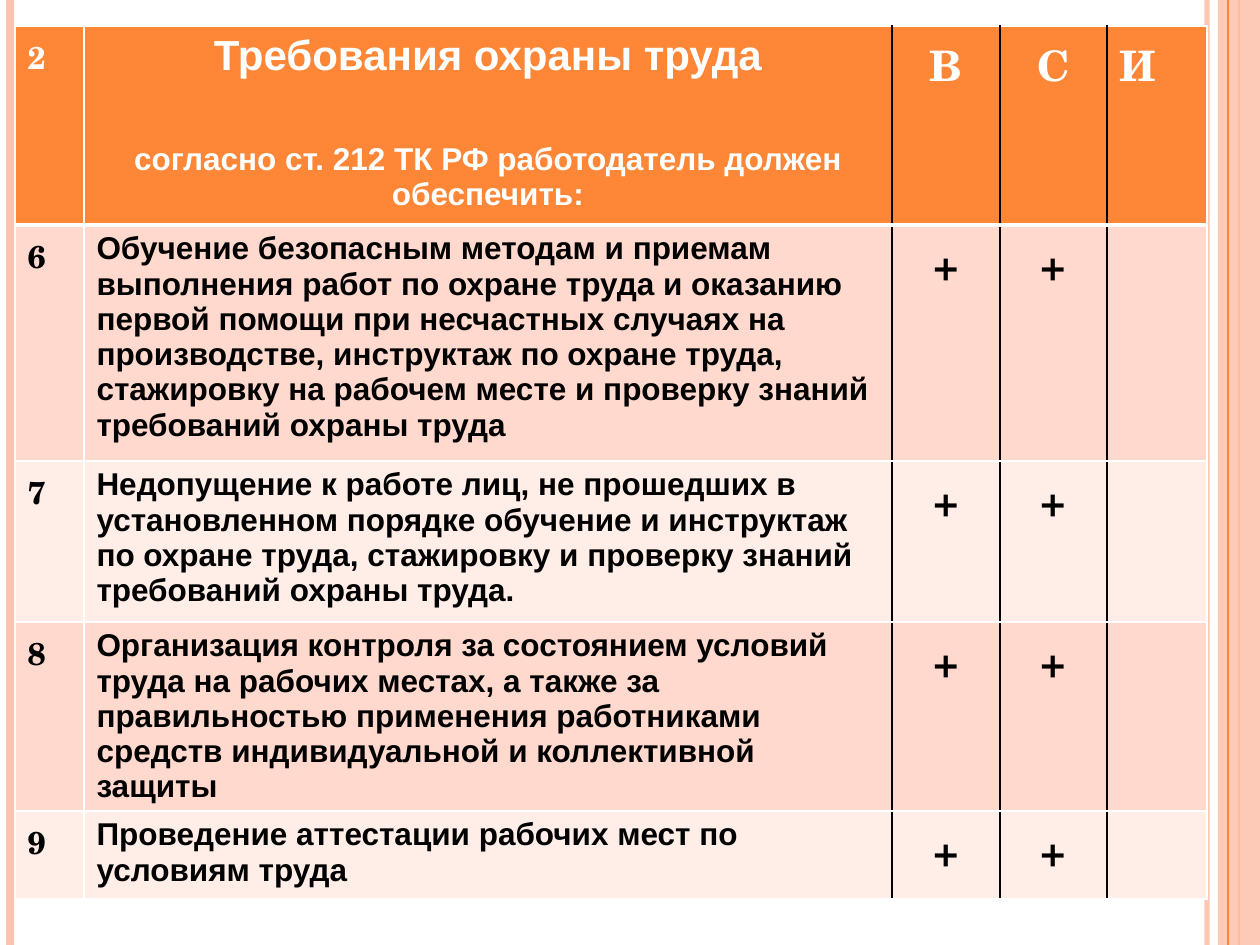
from dataclasses import dataclass

from pptx import Presentation
from pptx import util as u
from pptx.dml.color import RGBColor
from pptx.enum import shapes, text
from pptx.oxml.ns import qn
from lxml import etree

WHITE = RGBColor(0xFF, 0xFF, 0xFF)
BLACK = RGBColor(0, 0, 0)
ORANGE = RGBColor(0xFE, 0x86, 0x37)
PEACH = RGBColor(0xFE, 0xC3, 0xAE)
BAND_DARK = RGBColor(0xFF, 0xD9, 0xCE)
BAND_LIGHT = RGBColor(0xFF, 0xED, 0xE8)
SERIF = "TeX Gyre Schola"
SANS = "Arial"
WIDTH, HEIGHT = 1260, 945
COLUMNS = [69, 808, 108, 107, 100]
ROWS = [199, 236, 161, 161, 88]
TITLE = "Требования охраны труда"
SUBTITLE = "согласно ст. 212 ТК РФ работодатель должен обеспечить:"


@dataclass
class Stripe:
    x: int
    color: RGBColor
    weight: float
    alpha: int = 100


@dataclass
class Duty:
    number: str
    wording: str
    marks: tuple[str, str, str] = ("+", "+", "")


STRIPES_BELOW = [
    Stripe(1207, PEACH, 3, 93),
    Stripe(10, PEACH, 4.5),
    Stripe(1239, ORANGE, 1.5),
]
STRIPE_ABOVE = Stripe(1228, ORANGE, 0.75)
DUTIES = [
    Duty("6", "Обучение безопасным методам и приемам выполнения работ по охране труда "
         "и оказанию первой помощи при несчастных случаях на производстве, инструктаж "
         "по охране труда, стажировку на рабочем месте и проверку знаний требований "
         "охраны труда"),
    Duty("7", "Недопущение к работе лиц, не прошедших в установленном порядке обучение "
         "и инструктаж по охране труда, стажировку и проверку знаний требований "
         "охраны труда."),
    Duty("8", "Организация контроля за состоянием условий труда на рабочих местах, "
         "а также за правильностью применения работниками средств индивидуальной "
         "и коллективной защиты"),
    Duty("9", "Проведение аттестации рабочих мест по условиям труда"),
]


def px(n: int) -> u.Emu:
    return u.Emu(round(n * 914400 / 126))


def set_alpha(fill_parent, percent: int) -> None:
    color = fill_parent.find(".//" + qn("a:srgbClr"))
    etree.SubElement(color, qn("a:alpha")).set("val", str(percent * 1000))


def add_stripe(slide, stripe: Stripe) -> None:
    sp = slide.shapes.add_connector(
        shapes.MSO_CONNECTOR.STRAIGHT, px(stripe.x), 0, px(stripe.x), px(HEIGHT))
    sp.line.color.rgb = stripe.color
    sp.line.width = u.Pt(stripe.weight)
    if stripe.alpha < 100:
        set_alpha(sp.line._ln, stripe.alpha)
    etree.SubElement(sp._element.spPr, qn("a:effectLst"))


def add_side_band(slide) -> None:
    sp = slide.shapes.add_shape(
        shapes.MSO_SHAPE.RECTANGLE, px(1218), 0, px(42), px(HEIGHT))
    sp.shadow.inherit = False
    sp.fill.solid()
    sp.fill.fore_color.rgb = PEACH
    set_alpha(sp._element.spPr.find(qn("a:solidFill")), 87)
    sp.line.fill.background()


def add_border(cell, side: str, color: RGBColor, weight: int) -> None:
    ln = etree.SubElement(cell._tc.get_or_add_tcPr(), qn("a:ln" + side))
    ln.set("w", str(u.Pt(weight)))
    fill = etree.SubElement(ln, qn("a:solidFill"))
    etree.SubElement(fill, qn("a:srgbClr")).set("val", str(color))


def style_cell(cell, row: int, col: int) -> None:
    add_border(cell, "L", BLACK if col >= 2 else WHITE, 1)
    add_border(cell, "R", BLACK if 1 <= col <= 3 else WHITE, 1)
    add_border(cell, "T", WHITE, 3 if row == 1 else 1)
    add_border(cell, "B", WHITE, 3 if row == 0 else 1)
    cell.fill.solid()
    cell.fill.fore_color.rgb = (
        ORANGE if row == 0 else BAND_DARK if row % 2 else BAND_LIGHT)
    centred = col in (2, 3) or (row == 0 and col == 1)
    for i, p in enumerate(cell.text_frame.paragraphs):
        if centred:
            p.alignment = text.PP_ALIGN.CENTER
        for r in p.runs:
            large = col >= 2 or (row == 0 and col == 1 and i == 0)
            r.font.size = u.Pt(24 if large else 18)
            r.font.name = SANS if col == 1 else SERIF
            r.font.bold = True
            r.font.color.rgb = BLACK if row else WHITE


def add_duties_table(slide) -> None:
    table = slide.shapes.add_table(
        len(ROWS), len(COLUMNS), px(15), px(26), px(sum(COLUMNS)), px(sum(ROWS))).table
    table.horz_banding = False
    for column, width in zip(table.columns, COLUMNS):
        column.width = px(width)
    for row, height in zip(table.rows, ROWS):
        row.height = px(height)
    header = Duty("2", f"{TITLE}\n{SUBTITLE}", ("В", "С", "И"))
    for i, duty in enumerate([header, *DUTIES]):
        for j, words in enumerate((duty.number, duty.wording, *duty.marks)):
            cell = table.cell(i, j)
            if words:
                cell.text_frame.text = words
            style_cell(cell, i, j)
    table.cell(0, 1).text_frame.paragraphs[0].space_after = u.Pt(36)


def main() -> None:
    prs = Presentation()
    prs.slide_width, prs.slide_height = px(WIDTH), px(HEIGHT)
    slide = prs.slides.add_slide(prs.slide_layouts[6])
    for stripe in STRIPES_BELOW:
        add_stripe(slide, stripe)
    add_side_band(slide)
    add_stripe(slide, STRIPE_ABOVE)
    add_duties_table(slide)
    prs.save("out.pptx")


if __name__ == "__main__":
    main()
